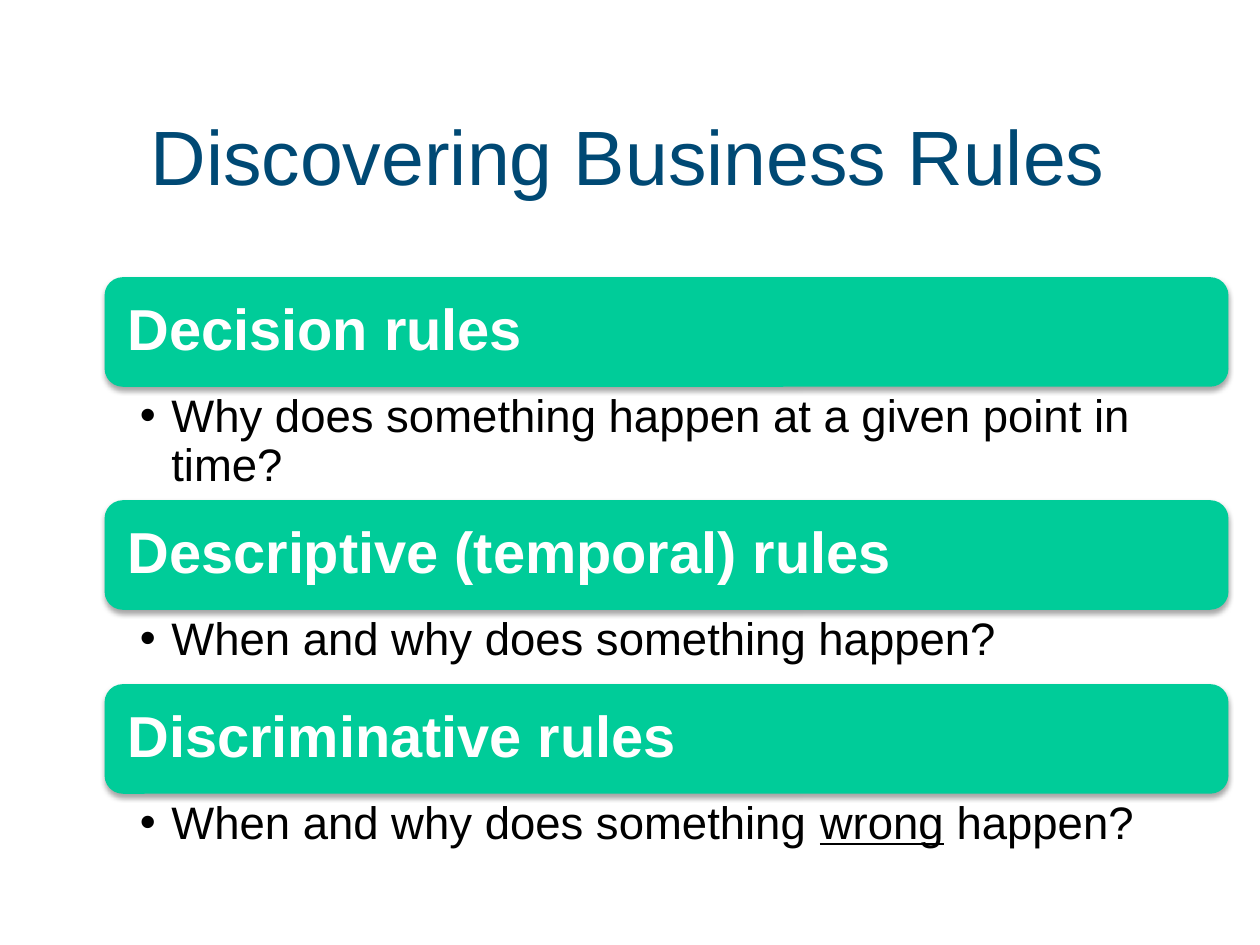
from dataclasses import dataclass

from lxml.etree import SubElement
from pptx import Presentation
from pptx.dml.color import RGBColor
from pptx.enum.shapes import MSO_SHAPE as Shape
from pptx.enum.text import MSO_ANCHOR as Anchor, PP_ALIGN as Align
from pptx.oxml.ns import qn
from pptx.util import Inches, Pt


@dataclass(frozen=True)
class Theme:
    """Colours, font and type sizes of the slide."""
    font: str = "Arial"
    title_color: RGBColor = RGBColor(0x00, 0x49, 0x74)
    bar_color: RGBColor = RGBColor(0x00, 0xCC, 0x99)
    bar_text: RGBColor = RGBColor(0xFF, 0xFF, 0xFF)
    body_text: RGBColor = RGBColor(0x00, 0x00, 0x00)
    shadow: str = "000000"
    title_size: int = 44
    bar_size: int = 33
    body_size: int = 26


THEME = Theme()
LEFT, WIDTH = 0.83, 8.92
FIRST_TOP, BAR_HEIGHT = 2.2, 0.87
RULES = [
    ("Decision rules",
     [("Why does something happen at a given point in time?", False)], 0.9),
    ("Descriptive (temporal) rules",
     [("When and why does something happen?", False)], 0.59),
    ("Discriminative rules",
     [("When and why does something ", False), ("wrong", True), (" happen?", False)], 0.59),
]


def add_run(paragraph, text, size, color, bold=False, underline=False):
    """Append one formatted run to a paragraph."""
    run = paragraph.add_run()
    run.text = text
    font = run.font
    font.name, font.size, font.bold = THEME.font, Pt(size), bold
    font.color.rgb = color
    if underline:
        font.underline = True


def set_frame(frame, anchor, horizontal, vertical):
    """Set wrapping, anchor and insets, and return the first paragraph."""
    frame.word_wrap = True
    frame.vertical_anchor = anchor
    frame.margin_left, frame.margin_right = map(Inches, horizontal)
    frame.margin_top = frame.margin_bottom = Inches(vertical)
    return frame.paragraphs[0]


def add_shadow(shape):
    """Give a shape a soft shadow that falls straight down."""
    shape.shadow.inherit = False
    effects = shape._element.spPr.find(qn("a:effectLst"))
    outer = SubElement(effects, qn("a:outerShdw"), blurRad=str(Pt(3.1)),
                       dist=str(Pt(1.8)), dir="5400000", rotWithShape="0")
    color = SubElement(outer, qn("a:srgbClr"), val=THEME.shadow)
    SubElement(color, qn("a:alpha"), val="35000")


def add_bullet(paragraph, indent):
    """Give a paragraph a round bullet with a hanging indent."""
    properties = paragraph._p.get_or_add_pPr()
    properties.set("marL", str(Inches(indent)))
    properties.set("indent", str(-Inches(indent)))
    SubElement(properties, qn("a:buFont"), typeface=THEME.font)
    SubElement(properties, qn("a:buChar"), char="•")


def add_title(slide, text, left, top, width, height):
    """Place the centred slide title in its box."""
    box = slide.shapes.add_textbox(*map(Inches, (left, top, width, height)))
    paragraph = set_frame(box.text_frame, Anchor.MIDDLE, (0.1, 0.1), 0.05)
    paragraph.alignment = Align.CENTER
    add_run(paragraph, text, THEME.title_size, THEME.title_color)


def add_bar(slide, text, left, top, width, height):
    """Place a rounded heading bar in its box."""
    bar = slide.shapes.add_shape(
        Shape.ROUNDED_RECTANGLE, *map(Inches, (left, top, width, height)))
    bar.fill.solid()
    bar.fill.fore_color.rgb = THEME.bar_color
    bar.line.fill.background()
    add_shadow(bar)
    paragraph = set_frame(bar.text_frame, Anchor.MIDDLE, (0.14, 0.14), 0.14)
    paragraph.alignment = Align.LEFT
    paragraph.line_spacing = 0.9
    add_run(paragraph, text, THEME.bar_size, THEME.bar_text, bold=True)


def add_question(slide, parts, left, top, width, height):
    """Place a bulleted question in its box."""
    box = slide.shapes.add_textbox(*map(Inches, (left, top, width, height)))
    paragraph = set_frame(box.text_frame, Anchor.TOP, (0.28, 0.26), 0.05)
    add_bullet(paragraph, 0.25)
    paragraph.level = 1
    paragraph.line_spacing = 0.9
    for text, underline in parts:
        add_run(paragraph, text, THEME.body_size, THEME.body_text, underline=underline)


def add_rules(slide, left, top, width):
    """Stack each heading bar and its question from the top down."""
    for heading, parts, question_height in RULES:
        add_bar(slide, heading, left, top, width, BAR_HEIGHT)
        top += BAR_HEIGHT
        add_question(slide, parts, left, top, width, question_height)
        top += question_height


def main():
    """Build and save the slide."""
    presentation = Presentation()
    presentation.slide_width, presentation.slide_height = Inches(10), Inches(7.5)
    slide = presentation.slides.add_slide(presentation.slide_layouts[6])
    add_title(slide, "Discovering Business Rules", LEFT, 0.8, 8.31, 0.86)
    add_rules(slide, LEFT, FIRST_TOP, WIDTH)
    presentation.save("out.pptx")


if __name__ == "__main__":
    main()
